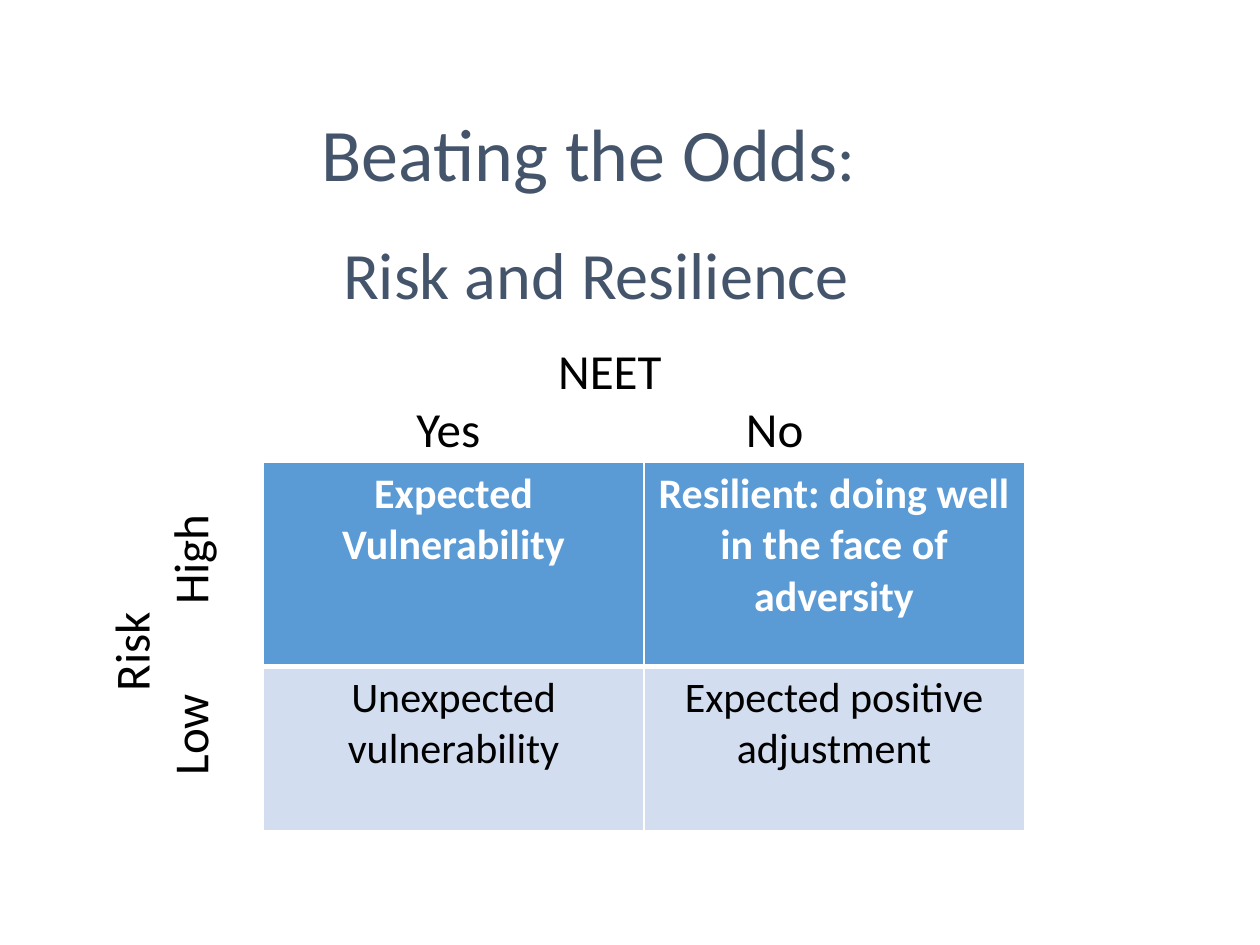
from lxml import etree
from pptx import Presentation
from pptx.dml.color import RGBColor
from pptx.enum.text import MSO_ANCHOR, MSO_AUTO_SIZE, PP_ALIGN
from pptx.oxml.ns import qn
from pptx.util import Inches, Pt

CENTER, LEFT = PP_ALIGN.CENTER, PP_ALIGN.LEFT
BOTTOM = MSO_ANCHOR.BOTTOM
NO_FIT = MSO_AUTO_SIZE.NONE
FONT = "Calibri"
SLATE, BLUE, PALE, WHITE, BLACK = "44546A", "5B9BD5", "D2DEEF", "FFFFFF", "000000"


def color(value):
    """Turn a hex string into a colour."""
    return RGBColor.from_string(value)


def set_all(target, values):
    """Set each named attribute on the target."""
    for name, value in values.items():
        setattr(target, name, value)


def add_run(p, text, size, fill, bold=False):
    """Add a formatted run to a paragraph."""
    r = p.add_run()
    r.text = text
    set_all(r.font, {"name": FONT, "size": Pt(size), "bold": bold})
    r.font.color.rgb = color(fill)


def place(sp, box):
    """Move and size a shape."""
    names = ("left", "top", "width", "height")
    set_all(sp, dict(zip(names, map(Inches, box))))


def add_title(s, box):
    """Fill the title placeholder with its two lines."""
    sp = s.shapes.title
    place(sp, box)
    tf = sp.text_frame
    set_all(tf, {"margin_left": 0, "margin_top": 0, "margin_right": 0,
                 "margin_bottom": 0, "word_wrap": True,
                 "auto_size": NO_FIT, "vertical_anchor": BOTTOM})
    first, second = tf.paragraphs[0], tf.add_paragraph()
    for p, gap in ((first, 0), (second, 33.3)):
        set_all(p, {"alignment": CENTER, "line_spacing": Pt(33.3),
                    "space_before": Pt(gap)})
    add_run(first, "Beating the Odds", 42.3, SLATE)
    add_run(first, ": ", 37.8, SLATE)
    add_run(second, "Risk and Resilience", 37.8, SLATE)


def add_center_tabs(p, stops):
    """Give a paragraph centred tab stops."""
    tabs = etree.SubElement(p._p.get_or_add_pPr(), qn("a:tabLst"))
    for stop in stops:
        etree.SubElement(tabs, qn("a:tab"), pos=str(Inches(stop)), algn="ctr")


def add_axis(s, box, name, levels, stops, rotation=0):
    """Add an axis name above its two level labels."""
    sp = s.shapes.add_textbox(*map(Inches, box))
    sp.rotation = rotation
    tf = sp.text_frame
    tf.word_wrap = True
    head, row = tf.paragraphs[0], tf.add_paragraph()
    head.alignment, row.alignment = CENTER, LEFT
    add_center_tabs(row, stops)
    add_run(head, name, 28, BLACK)
    add_run(row, "".join("\t" + level for level in levels), 28, BLACK)


def set_borders(cell, widths):
    """Draw white cell borders with the given widths in points."""
    tc_pr = cell._tc.get_or_add_tcPr()
    for i, (side, width) in enumerate(widths.items()):
        ln = etree.Element(qn(f"a:{side}"), w=str(Pt(width)))
        fill = etree.SubElement(ln, qn("a:solidFill"))
        etree.SubElement(fill, qn("a:srgbClr"), val=WHITE)
        tc_pr.insert(i, ln)


def add_matrix(s, box, heights, rows):
    """Add the risk and outcome table."""
    table = s.shapes.add_table(2, 2, *map(Inches, box)).table
    styles = ((BLUE, WHITE, True, 1, 3), (PALE, BLACK, False, 3, 1))
    for i, (fill, ink, bold, top, bottom) in enumerate(styles):
        table.rows[i].height = Inches(heights[i])
        for j, text in enumerate(rows[i]):
            cell = table.cell(i, j)
            cell.fill.solid()
            cell.fill.fore_color.rgb = color(fill)
            set_borders(cell, {"lnL": 1, "lnR": 1, "lnT": top, "lnB": bottom})
            p = cell.text_frame.paragraphs[0]
            p.alignment = CENTER
            add_run(p, text, 24, ink, bold)


def main():
    """Build the slide and save it."""
    prs = Presentation()
    set_all(prs, {"slide_width": Inches(10), "slide_height": Inches(7.5)})
    s = prs.slides.add_slide(prs.slide_layouts[5])
    add_title(s, (1.54, 1.23, 6.38, 1.25))
    add_matrix(s, (2.09, 3.67, 6.04, 2.92), (1.62, 1.3), (
        ("Expected Vulnerability",
         "Resilient: doing well in the face of adversity"),
        ("Unexpected vulnerability", "Expected positive adjustment")))
    add_axis(s, (1.69, 2.65, 6.3, 1.04), "NEET", ("Yes", "No"), (1.77, 4.36))
    add_axis(s, (-0.11, 4.61, 2.76, 1.04), "Risk ", ("Low", "High"),
             (0.58, 1.97), 270)
    prs.save("out.pptx")


if __name__ == "__main__":
    main()
